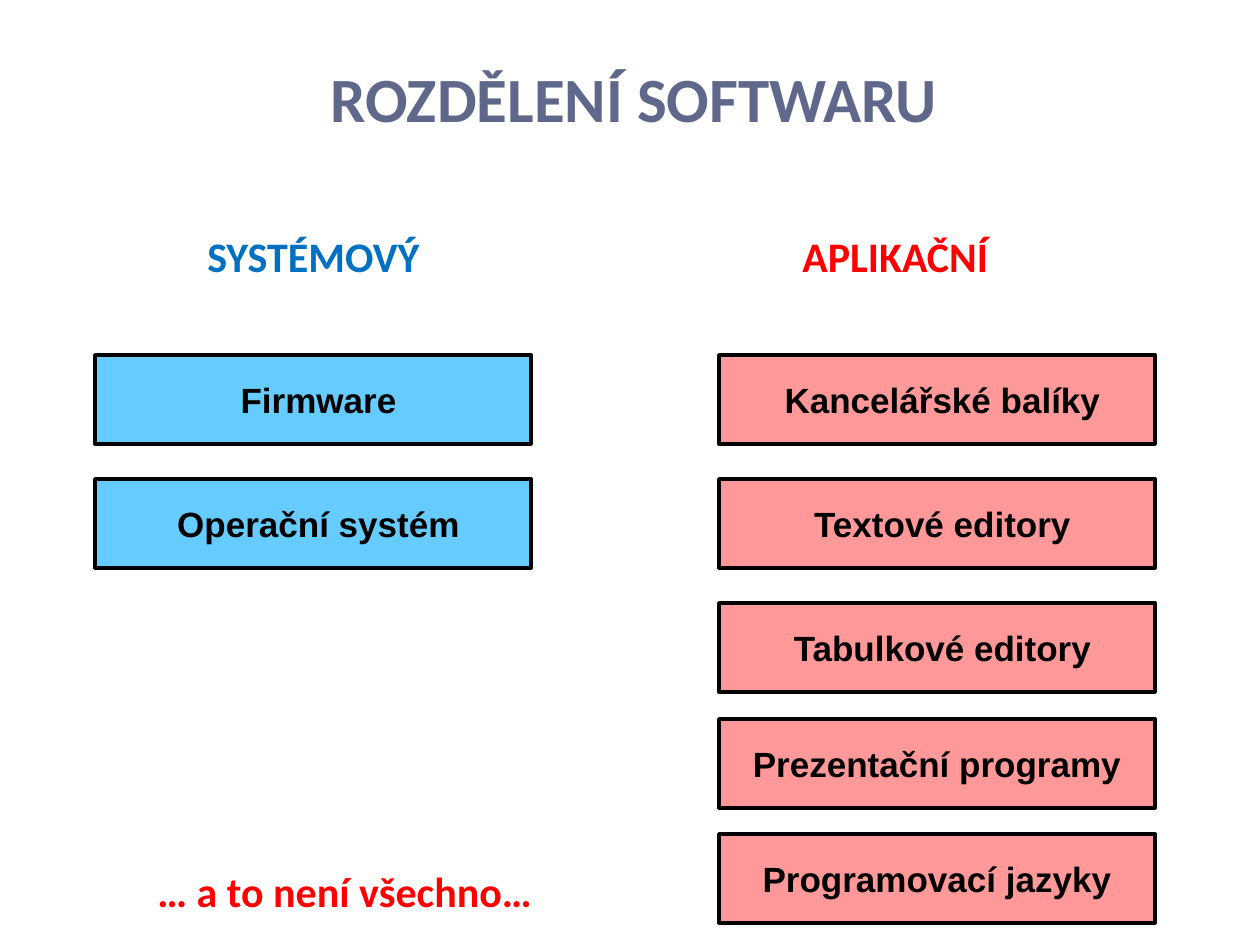
from pptx import Presentation
from pptx.dml.color import RGBColor
from pptx.enum.shapes import MSO_SHAPE
from pptx.enum.text import MSO_ANCHOR, MSO_AUTO_SIZE, PP_ALIGN
from pptx.util import Pt

RECT = MSO_SHAPE.RECTANGLE
MIDDLE, BOTTOM = MSO_ANCHOR.MIDDLE, MSO_ANCHOR.BOTTOM
LEFT, CENTER = PP_ALIGN.LEFT, PP_ALIGN.CENTER
FIT_SHAPE = MSO_AUTO_SIZE.SHAPE_TO_FIT_TEXT

PX_PER_INCH = 126
INDENT = 11
BOX_W, BOX_H = 436, 89
ROW_TOPS = (0, 124, 248, 364, 479)


def px(n):
    return round(n * 914400 / PX_PER_INCH)


def rgb(value):
    return RGBColor.from_string(value)


def set_attrs(obj, values):
    for name, value in values.items():
        setattr(obj, name, value)


def write(sp, text, font, size, color, align=LEFT, indent=0, frame=None):
    """Fill the shape with one bold line of text and return its paragraph."""
    tf = sp.text_frame
    set_attrs(tf, frame or {"word_wrap": True})
    p = tf.paragraphs[0]
    p.alignment = align
    if indent:
        pPr = p._p.get_or_add_pPr()
        pPr.set("marL", str(px(indent)))
        pPr.set("indent", "0")
    r = p.add_run()
    r.text = text
    set_attrs(r.font, {"name": font, "size": Pt(size), "bold": True})
    r.font.color.rgb = rgb(color)
    return p


def add_title(slide, box, text):
    sp = slide.shapes.add_textbox(*map(px, box))
    p = write(sp, text, "Calibri", 36, "5F688B", CENTER,
              frame={"word_wrap": True, "vertical_anchor": BOTTOM})
    p.line_spacing = Pt(20)


def add_label(slide, box, text, color):
    sp = slide.shapes.add_textbox(*map(px, box))
    write(sp, text, "Calibri", 24, color, indent=INDENT,
          frame={"word_wrap": False, "auto_size": FIT_SHAPE})


def add_column(slide, left, top, fill, items):
    """Stack outlined boxes; each item is its text and its left indent."""
    for (text, indent), row_top in zip(items, ROW_TOPS):
        sp = slide.shapes.add_shape(
            RECT, px(left), px(top + row_top), px(BOX_W), px(BOX_H))
        sp.shadow.inherit = False
        sp.fill.solid()
        sp.fill.fore_color.rgb = rgb(fill)
        sp.line.color.rgb = rgb("000000")
        sp.line.width = Pt(2)
        write(sp, text, "Arial", 20, "000000", CENTER, indent,
              {"word_wrap": True, "vertical_anchor": MIDDLE})


def main():
    prs = Presentation()
    prs.slide_width, prs.slide_height = px(1260), px(945)
    slide = prs.slides.add_slide(prs.slide_layouts[6])

    add_title(slide, (54, 55, 1160, 86), "ROZDĚLENÍ SOFTWARU")
    add_label(slide, (184, 224, 306, 63), "SYSTÉMOVÝ", "0070C0")
    add_label(slide, (779, 224, 285, 63), "APLIKAČNÍ", "FF0000")
    add_column(slide, 95, 355, "66CCFF", [
        ("Firmware", INDENT),
        ("Operační systém", INDENT),
    ])
    add_column(slide, 719, 355, "FF9999", [
        ("Kancelářské balíky", INDENT),
        ("Textové editory", INDENT),
        ("Tabulkové editory", INDENT),
        ("Prezentační programy", 0),
        ("Programovací jazyky", 0),
    ])
    add_label(slide, (134, 859, 478, 63), "… a to není všechno…", "FF0000")
    prs.save("out.pptx")


if __name__ == "__main__":
    main()
